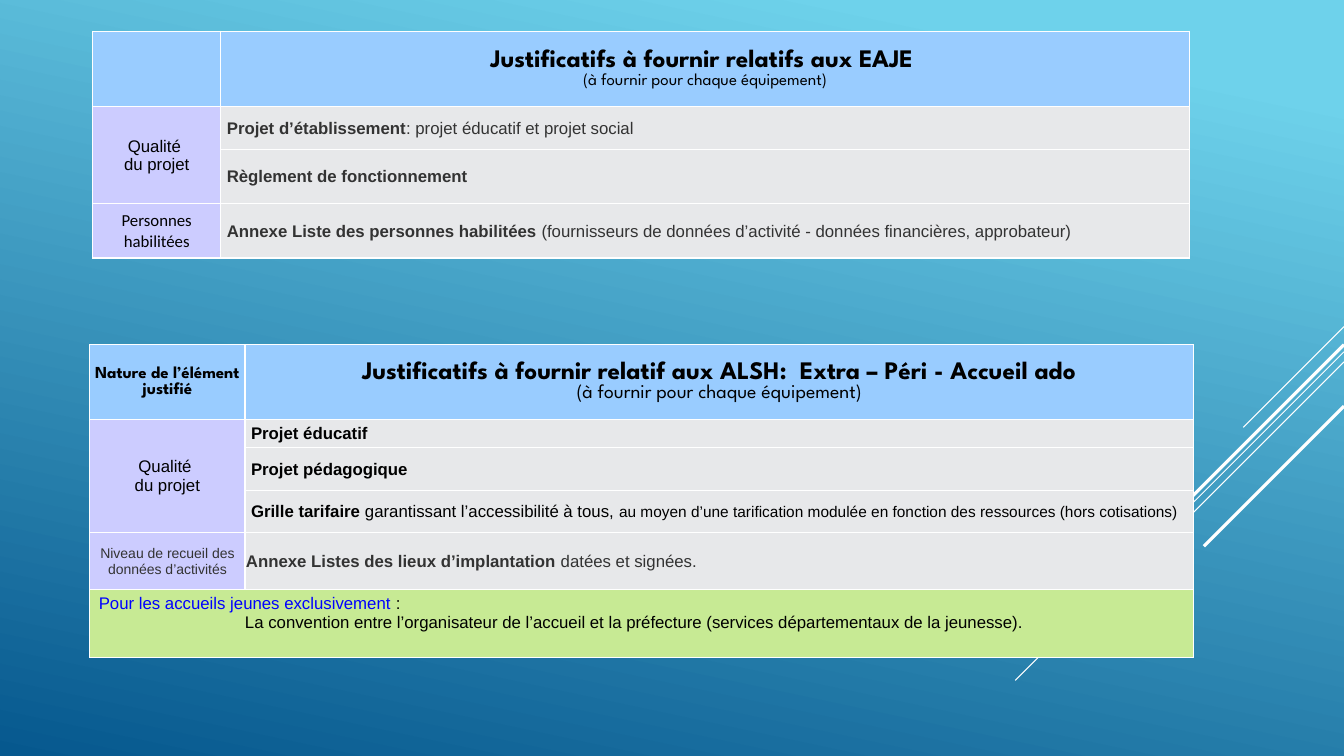
from lxml.etree import SubElement
from pptx import Presentation
from pptx.dml.color import RGBColor
from pptx.enum.shapes import MSO_CONNECTOR
from pptx.enum.text import MSO_ANCHOR, PP_ALIGN
from pptx.oxml.ns import qn
from pptx.util import Inches, Pt

WHITE = RGBColor(0xFF, 0xFF, 0xFF)
BLACK = RGBColor(0x00, 0x00, 0x00)
DARK = RGBColor(0x33, 0x33, 0x33)
BLUE = RGBColor(0x00, 0x00, 0xFF)
SKY = RGBColor(0x6E, 0xD2, 0xEB)
DEEP = RGBColor(0x06, 0x58, 0x8E)
HEADER = RGBColor(0x99, 0xCC, 0xFF)
LILAC = RGBColor(0xCC, 0xCC, 0xFF)
GREY = RGBColor(0xE7, 0xE8, 0xEA)
GREEN = RGBColor(0xC7, 0xEA, 0x94)
BODY, TITLE, ALTERNATE = "Arial", "League Spartan", "Calibri"


class Page:
    """Holds the current slide and draws its elements in one style."""

    def __init__(self, deck):
        self.slide = deck.slides.add_slide(deck.slide_layouts[6])

    def background(self, start, end, angle):
        fill = self.slide.background.fill
        fill.gradient()
        fill.gradient_angle = 360 - angle
        for stop, color, position in zip(fill.gradient_stops, (start, end), (0.1, 1)):
            stop.color.rgb = color
            stop.position = position

    def diagonal(self, top, length, width):
        """Line falling at 45 degrees from the right edge of the slide."""
        right = 13.33
        line = self.slide.shapes.add_connector(
            MSO_CONNECTOR.STRAIGHT, Inches(right), Inches(top),
            Inches(right - length), Inches(top + length))
        line.line.color.rgb = WHITE
        line.line.width = Pt(width)
        SubElement(line._element.spPr, qn("a:effectLst"))

    def table(self, left, top, columns, rows):
        frame = self.slide.shapes.add_table(
            len(rows), len(columns), Inches(left), Inches(top),
            Inches(sum(columns)), Inches(sum(rows)))
        table = frame.table
        table.first_row = table.horz_banding = False
        for column, width in zip(table.columns, columns):
            column.width = Inches(width)
        for row, height in zip(table.rows, rows):
            row.height = Inches(height)
        for number, row in enumerate(table.rows):
            for place, cell in enumerate(row.cells):
                self.format_cell(cell, HEADER if number == 0 else (LILAC, GREY)[place])
        return table

    def format_cell(self, cell, color):
        properties = cell._tc.get_or_add_tcPr()
        for side in ("lnL", "lnR", "lnT", "lnB"):
            border = SubElement(properties, qn(f"a:{side}"), w=str(Pt(1)))
            solid = SubElement(border, qn("a:solidFill"))
            SubElement(solid, qn("a:srgbClr"), val=str(WHITE))
        cell.fill.solid()
        cell.fill.fore_color.rgb = color
        cell.vertical_anchor = MSO_ANCHOR.MIDDLE
        cell.margin_left = cell.margin_right = cell.margin_top = Inches(0.01)
        cell.margin_bottom = 0

    def fill_text(self, cell, lines, color=BLACK, font=BODY, size=12, align=PP_ALIGN.CENTER):
        """Each line is a list of (text, bold, optional size) spans."""
        for number, spans in enumerate(lines):
            para = cell.text_frame.paragraphs[0] if number == 0 else cell.text_frame.add_paragraph()
            para.alignment = align
            para.font.name = font
            para.font.size = Pt(size)
            para.font.color.rgb = color
            for text, bold, *own_size in spans:
                span = para.add_run()
                span.text = text
                span.font.bold = bold
                if own_size:
                    span.font.size = Pt(own_size[0])

    def entry(self, cell, *spans, color=BLACK, inset=0.06):
        cell.margin_left = Inches(inset)
        self.fill_text(cell, [spans], color, align=PP_ALIGN.LEFT)

    def header(self, cell, title, note_size):
        note = "(à fournir pour chaque équipement)"
        self.fill_text(cell, [[(title, True, 18)], [(note, False, note_size)]], font=TITLE)

    def quality(self, table, last_row):
        cell = table.cell(1, 0)
        cell.merge(table.cell(last_row, 0))
        self.fill_text(cell, [[("Qualité ", False)], [("du projet", False)]])


def main():
    deck = Presentation()
    deck.slide_width, deck.slide_height = Inches(13.33), Inches(7.5)
    page = Page(deck)

    # Background and diagonal lines
    page.background(SKY, DEEP, 102)
    for top, length, width in ((3.24, 1, 0.75), (3.49, 3.26, 0.75), (3.59, 2.07, 0.75),
                               (3.42, 1.91, 2.25), (4.03, 1.39, 2.25)):
        page.diagonal(top, length, width)

    # EAJE table
    eaje = page.table(0.92, 0.31, (1.27, 9.61), (0.75, 0.42, 0.54, 0.54))
    page.header(eaje.cell(0, 1), "Justificatifs à fournir relatifs aux EAJE ", 12)
    page.quality(eaje, 2)
    page.fill_text(eaje.cell(3, 0), [[("Personnes habilitées", False)]], font=ALTERNATE)
    page.entry(eaje.cell(1, 1), ("Projet d’établissement", True),
               (": projet éducatif et projet social", False), color=DARK)
    page.entry(eaje.cell(2, 1), ("Règlement de fonctionnement", True), color=DARK)
    page.entry(eaje.cell(3, 1), ("Annexe Liste des personnes habilitées ", True),
               ("(fournisseurs de données d’activité - données financières, approbateur)", False),
               color=DARK)

    # ALSH table
    alsh = page.table(0.89, 3.42, (1.54, 9.41), (0.74, 0.28, 0.43, 0.41, 0.57, 0.67))
    page.fill_text(alsh.cell(0, 0), [[("Nature de l’élément justifié", True)]], font=TITLE)
    page.header(alsh.cell(0, 1),
                "Justificatifs à fournir relatif aux ALSH:  Extra – Péri - Accueil ado", 14)
    page.quality(alsh, 3)
    page.entry(alsh.cell(1, 1), ("Projet éducatif", True))
    page.entry(alsh.cell(2, 1), ("Projet pédagogique", True))
    page.entry(alsh.cell(3, 1), ("Grille tarifaire ", True),
               ("garantissant l’accessibilité à tous, ", False),
               ("au moyen d’une tarification modulée en fonction des ressources "
                "(hors cotisations)", False, 11))
    page.fill_text(alsh.cell(4, 0), [[("Niveau de recueil des données d’activités", False)]],
                   color=DARK, size=10)
    page.entry(alsh.cell(4, 1), ("Annexe Listes des lieux d’implantation ", True),
               ("datées et signées.", False), color=DARK, inset=0.01)

    # Youth centres note across the bottom row
    youth = alsh.cell(5, 0)
    youth.merge(alsh.cell(5, 1))
    youth.fill.fore_color.rgb = GREEN
    youth.vertical_anchor = MSO_ANCHOR.TOP
    youth.margin_left, youth.margin_top = Inches(0.09), Inches(0.05)
    page.fill_text(youth, [
        [("Pour les accueils jeunes exclusivement ", False), (":", False)],
        [("La convention entre l’organisateur de l’accueil et la préfecture "
          "(services départementaux de la jeunesse).", False)],
    ], align=PP_ALIGN.LEFT)
    intro, agreement = youth.text_frame.paragraphs
    intro.runs[0].font.color.rgb = BLUE
    agreement._p.get_or_add_pPr().set("marL", str(Inches(1.45)))

    deck.save("out.pptx")


if __name__ == "__main__":
    main()
